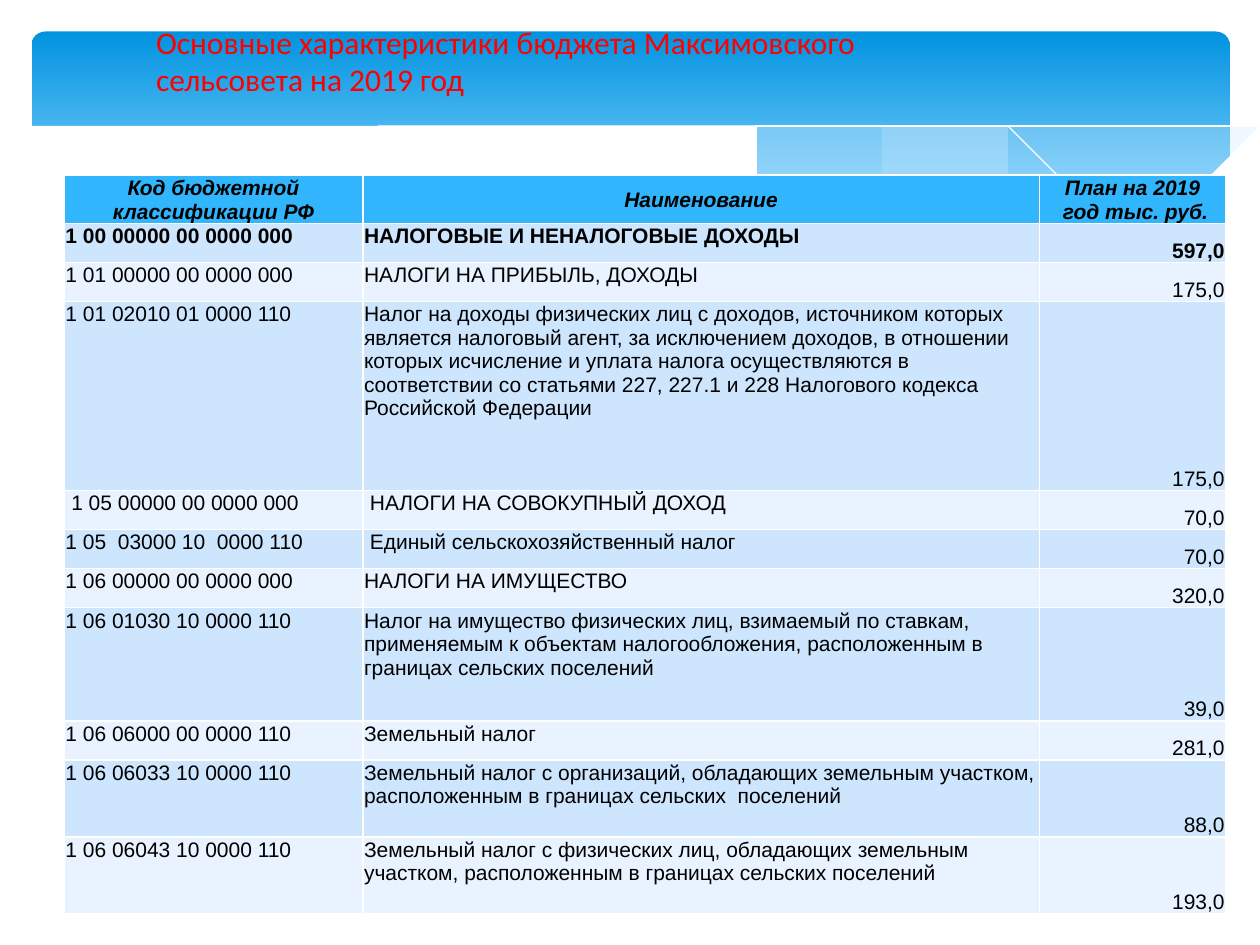
import pptx
import pptx.util
import pptx.dml.color
import pptx.enum.shapes
import pptx.enum.text
import pptx.oxml.ns
import lxml.etree

W, H = 10, 7.5
TITLE = "Основные характеристики бюджета Максимовского сельсовета на 2019 год"
HEAD = ("Код бюджетной классификации РФ", "Наименование", "План на 2019\n год тыс. руб.")
COLS = (2.37, 5.37, 1.48)
LOW, MID = 0.31, 0.61
# code, name, plan, row height
ROWS = [
    ("1 00 00000 00 0000 000", "НАЛОГОВЫЕ И НЕНАЛОГОВЫЕ ДОХОДЫ", "597,0", LOW),
    ("1 01 00000 00 0000 000", "НАЛОГИ НА ПРИБЫЛЬ, ДОХОДЫ", "175,0", LOW),
    ("1 01 02010 01 0000 110",
     "Налог на доходы физических лиц с доходов, источником которых является налоговый агент, "
     "за исключением доходов, в отношении которых исчисление и уплата налога осуществляются "
     "в соответствии со статьями 227, 227.1 и 228 Налогового кодекса Российской Федерации",
     "175,0", 1.5),
    (" 1 05 00000 00 0000 000", " НАЛОГИ НА СОВОКУПНЫЙ ДОХОД", "70,0", LOW),
    ("1 05  03000 10  0000 110", " Единый сельскохозяйственный налог", "70,0", LOW),
    ("1 06 00000 00 0000 000", "НАЛОГИ НА ИМУЩЕСТВО", "320,0", LOW),
    ("1 06 01030 10 0000 110",
     "Налог на имущество физических лиц, взимаемый по ставкам, применяемым к объектам "
     "налогообложения, расположенным в границах сельских поселений", "39,0", 0.9),
    ("1 06 06000 00 0000 110", "Земельный налог", "281,0", LOW),
    ("1 06 06033 10 0000 110",
     "Земельный налог с организаций, обладающих земельным участком, "
     "расположенным в границах сельских  поселений", "88,0", MID),
    ("1 06 06043 10 0000 110",
     "Земельный налог с физических лиц, обладающих земельным участком, "
     "расположенным в границах сельских поселений", "193,0", MID),
]
# Waves: edges (smooth curves through points, in inches), fill, opacity in percent
WAVES = [
    ([[(9.76, 0.94), (9.21, 1.04), (8.61, 1.18), (7.79, 1.37), (7.06, 1.52), (6.61, 1.6)],
      [(6.61, 1.6), (7.19, 1.67), (7.92, 1.72), (8.54, 1.7), (9.21, 1.6), (9.76, 1.41)]],
     "C6E7FC", 29),
    ([[(8.93, 1.67), (8.07, 1.54), (7.06, 1.34), (6.29, 1.16), (5.41, 0.97), (4.65, 0.86),
       (3.8, 0.8), (3.28, 0.81), (2.86, 0.86)],
      [(2.86, 0.86), (3.62, 0.97), (4.49, 1.16), (5.66, 1.43), (6.65, 1.61), (7.48, 1.7),
       (8.18, 1.73), (8.93, 1.67)]], "C6E7FC", 40),
    ([[(3.09, 0.9), (3.44, 0.84), (4.16, 0.81), (4.89, 0.84), (5.82, 0.94), (6.95, 1.14),
       (7.95, 1.36), (9.07, 1.66)]], None, 100),
    ([[(6.13, 1.51), (6.95, 1.3), (7.76, 1.11), (8.66, 0.93), (9.24, 0.84), (9.75, 0.8)]],
     None, 100),
    ([[(9.77, 1.41), (9.3, 1.57), (8.75, 1.67), (8.09, 1.71), (7.44, 1.68), (6.68, 1.6),
       (5.79, 1.44), (4.47, 1.14), (3.65, 0.96), (2.92, 0.85), (2.3, 0.79), (1.77, 0.78),
       (1.19, 0.82), (0.67, 0.91), (0.23, 1.07)],
      [(0.23, 1.07), (0.23, 2.24)], [(0.23, 2.24), (9.77, 2.24)]], "FFFFFF", 100),
]

inch, pt = pptx.util.Inches, pptx.util.Pt
align, anchor = pptx.enum.text.PP_ALIGN, pptx.enum.text.MSO_ANCHOR


def color(code):
    return pptx.dml.color.RGBColor.from_string(code)


def paint(fill, code):
    fill.solid()
    fill.fore_color.rgb = color(code)


def curve(pts, steps=6):
    """Catmull-Rom spline through the points."""
    ext = [pts[0], *pts, pts[-1]]
    out = [pts[0]]
    for a, b, c, d in zip(ext, ext[1:], ext[2:], ext[3:]):
        for k in range(1, steps + 1):
            t = k / steps
            out.append(tuple(
                (2 * q + (r - p) * t + (2 * p - 5 * q + 4 * r - s) * t ** 2
                 + (3 * q - p - 3 * r + s) * t ** 3) / 2
                for p, q, r, s in zip(a, b, c, d)))
    return out


def wave(shapes, edges, code, share):
    pts = [p for edge in edges for p in curve(edge)]
    pen = shapes.build_freeform(*pts[0], scale=inch(1))
    pen.add_line_segments(pts[1:], close=code is not None)
    shape = pen.convert_to_shape()
    shape.shadow.inherit = False
    if code is None:
        shape.fill.background()
        shape.line.color.rgb = color("FFFFFF")
        shape.line.width = pt(0)
        return
    paint(shape.fill, code)
    shape.line.fill.background()
    if share < 100:
        tone = shape.fill._xPr.find(".//" + pptx.oxml.ns.qn("a:srgbClr"))
        lxml.etree.SubElement(tone, pptx.oxml.ns.qn("a:alpha"), val=str(share * 1000))


def write(cell, text, code, side, place, bold, slant):
    paint(cell.fill, code)
    cell.margin_left = cell.margin_right = cell.margin_top = inch(0.01)
    cell.margin_bottom = 0
    cell.vertical_anchor = place
    cell.text = text
    for par in cell.text_frame.paragraphs:
        par.alignment = side
        font = par.font
        font.name, font.size, font.bold, font.italic = "Arial", pt(12), bold, slant
        font.color.rgb = color("000000")


deck = pptx.Presentation()
deck.slide_width, deck.slide_height = inch(W), inch(H)
shapes = deck.slides.add_slide(deck.slide_layouts[6]).shapes

# Banner
band = shapes.add_shape(pptx.enum.shapes.MSO_SHAPE.ROUNDED_RECTANGLE,
                        inch(0.25), inch(0.25), inch(9.51), inch(1.56))
band.adjustments[0] = 0.071
band.shadow.inherit = False
band.line.fill.background()
band.fill.gradient()
band.fill.gradient_angle = 270
for stop, (pos, code) in zip(band.fill.gradient_stops, [(0, "0293E0"), (0.9, "83D3FE")]):
    stop.position = pos
    stop.color.rgb = color(code)
for edges, code, share in WAVES:
    wave(shapes, edges, code, share)

# Budget table
highs = [0.38] + [row[-1] for row in ROWS]
table = shapes.add_table(len(highs), len(COLS), inch(0.51), inch(1.39),
                         inch(sum(COLS)), inch(sum(highs))).table
for col, size in zip(table.columns, COLS):
    col.width = inch(size)
for row, size in zip(table.rows, highs):
    row.height = inch(size)
for c, text in enumerate(HEAD):
    write(table.cell(0, c), text, "31B6FD", align.CENTER,
          anchor.MIDDLE if c else anchor.TOP, True, True)
for r, row in enumerate(ROWS, 1):
    for c, text in enumerate(row[:-1]):
        side, place = (align.RIGHT, anchor.BOTTOM) if c == 2 else (align.LEFT, anchor.TOP)
        write(table.cell(r, c), text, "CEE5FE" if r % 2 else "E8F3FF",
              side, place, r == 1, False)

# Title
box = shapes.add_textbox(inch(1.14), inch(0.13), inch(6.36), inch(0.71)).text_frame
box.word_wrap = True
box.text = TITLE
font = box.paragraphs[0].font
font.name, font.size = "Calibri", pt(18)
font.color.rgb = color("FF0000")

deck.save("out.pptx")
